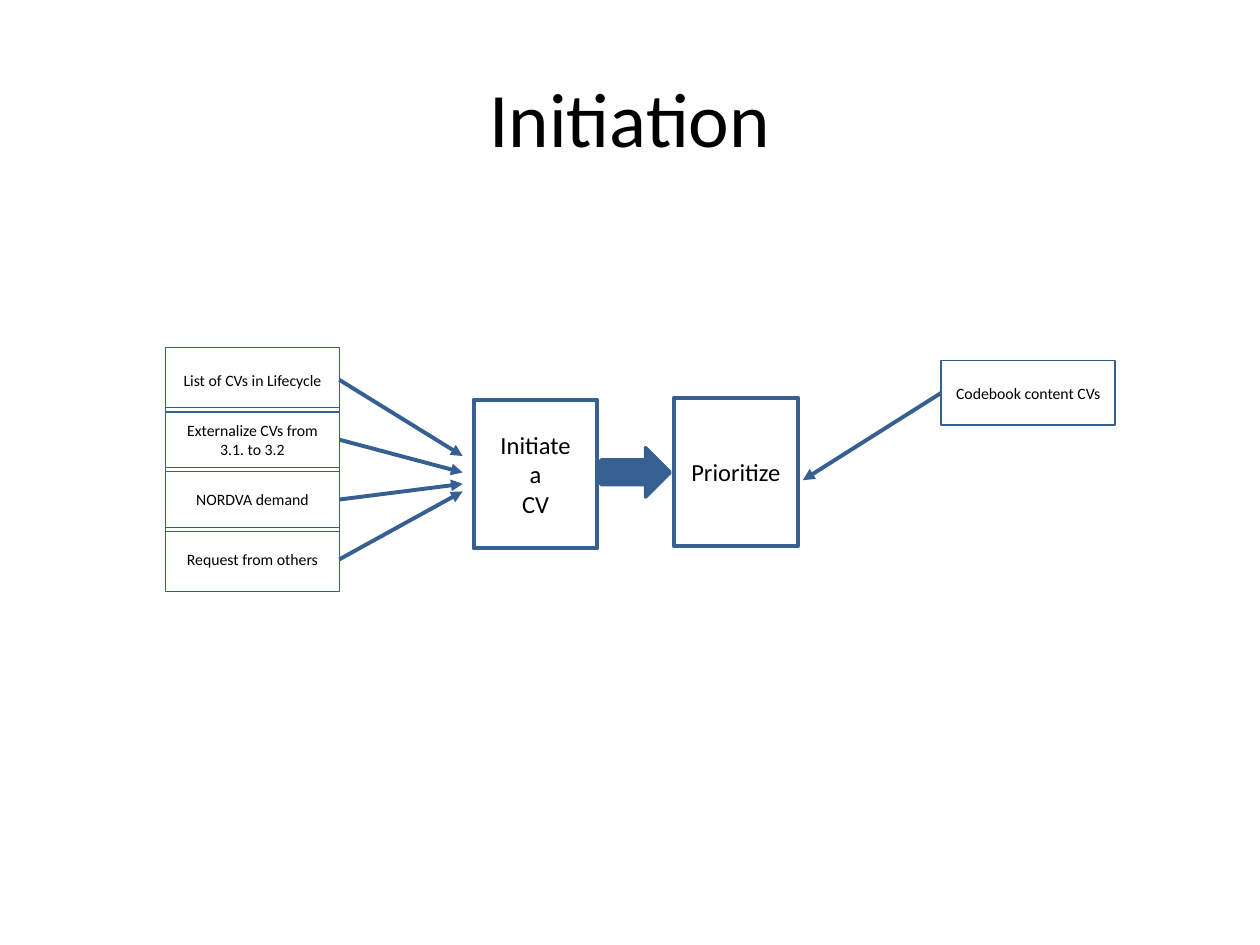
from lxml.etree import SubElement
from pptx import Presentation
from pptx.dml.color import RGBColor
from pptx.enum.shapes import MSO_CONNECTOR as Connector, MSO_SHAPE as Shape
from pptx.enum.text import MSO_ANCHOR as Anchor, PP_ALIGN as Align
from pptx.oxml.ns import qn
from pptx.util import Pt

BLUE = "376092"
BLACK = "000000"
SOURCE_SIZE = (99.4, 36.7)
STEP_SIZE = (70.6, 85)
SOURCE_LEFT, SOURCE_TOP, SOURCE_PITCH = 94.5, 198.7, 34.2
SOURCES = [
    ("List of CVs in Lifecycle", 260.6),
    ("Externalize CVs from 3.1. to 3.2", 270),
    ("NORDVA demand", 276.5),
    ("Request from others", 280.8),
]


def color(hex_code):
    """Turn a hex string into a colour."""
    return RGBColor.from_string(hex_code)


def write(frame, text, size):
    """Fill a text frame with centred black Calibri text."""
    frame.text = text
    frame.word_wrap = True
    frame.vertical_anchor = Anchor.MIDDLE
    for paragraph in frame.paragraphs:
        paragraph.alignment = Align.CENTER
        for run in paragraph.runs:
            run.font.name = "Calibri"
            run.font.size = Pt(size)
            run.font.color.rgb = color(BLACK)


def add_title(slide, text):
    """Place the slide heading."""
    title = slide.shapes.add_textbox(Pt(36), Pt(21.6), Pt(648), Pt(90))
    write(title.text_frame, text, 44)


def add_outlined(slide, kind, position, extent, weight):
    """Add an unfilled preset shape with a blue outline."""
    shape = slide.shapes.add_shape(kind, *map(Pt, position + extent))
    shape.shadow.inherit = False
    shape.fill.background()
    shape.line.color.rgb = color(BLUE)
    shape.line.width = Pt(weight)
    return shape


def add_source(slide, text, left, top):
    """Add a small box naming where a vocabulary comes from."""
    source = add_outlined(slide, Shape.RECTANGLE, (left, top), SOURCE_SIZE, 0.75)
    write(source.text_frame, text, 9)
    return source


def add_step(slide, text, left, top):
    """Add a large box for a process step."""
    step = add_outlined(slide, Shape.RECTANGLE, (left, top), STEP_SIZE, 2.25)
    write(step.text_frame, text, 14)


def add_block_arrow(slide, position, extent):
    """Add the solid arrow between the process steps."""
    block_arrow = add_outlined(slide, Shape.RIGHT_ARROW, position, extent, 2)
    block_arrow.fill.solid()
    block_arrow.fill.fore_color.rgb = color(BLUE)


def add_arrow(slide, source, side, tip_x, tip_y):
    """Draw an arrow from the middle of a source's side to a tip."""
    arrow = slide.shapes.add_connector(
        Connector.STRAIGHT, source.left, source.top, Pt(tip_x), Pt(tip_y)
    )
    arrow.begin_connect(source, side)
    arrow.line.color.rgb = color(BLUE)
    arrow.line.width = Pt(2.25)
    SubElement(arrow.line._get_or_add_ln(), qn("a:tailEnd"), type="triangle")
    SubElement(arrow._element.spPr, qn("a:effectLst"))


def main():
    """Build the initiation slide and save it."""
    deck = Presentation()
    deck.slide_width, deck.slide_height = Pt(720), Pt(540)
    slide = deck.slides.add_slide(deck.slide_layouts[6])

    add_title(slide, "Initiation")
    for row, (text, tip_y) in enumerate(SOURCES):
        source = add_source(slide, text, SOURCE_LEFT, SOURCE_TOP + row * SOURCE_PITCH)
        add_arrow(slide, source, 3, 264.4, tip_y)

    add_step(slide, "Initiate\na\nCV", 270.7, 228.4)
    add_step(slide, "Prioritize", 385.2, 227.2)
    codebook = add_source(slide, "Codebook content CVs", 537.8, 206.2)
    add_arrow(slide, codebook, 1, 458.8, 274.4)
    add_block_arrow(slide, (343.4, 255.8), (39.6, 28.2))

    deck.save("out.pptx")


if __name__ == "__main__":
    main()
